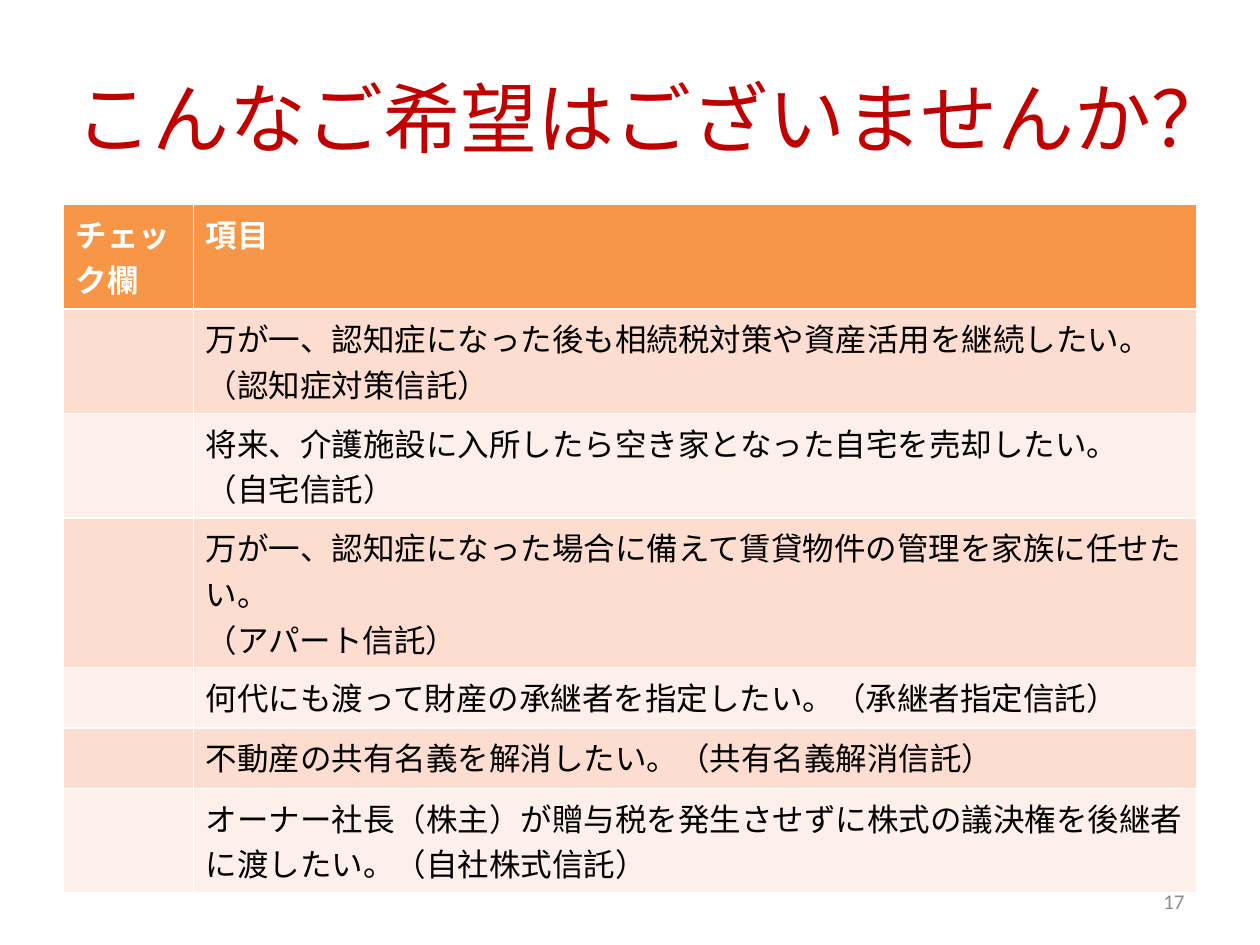
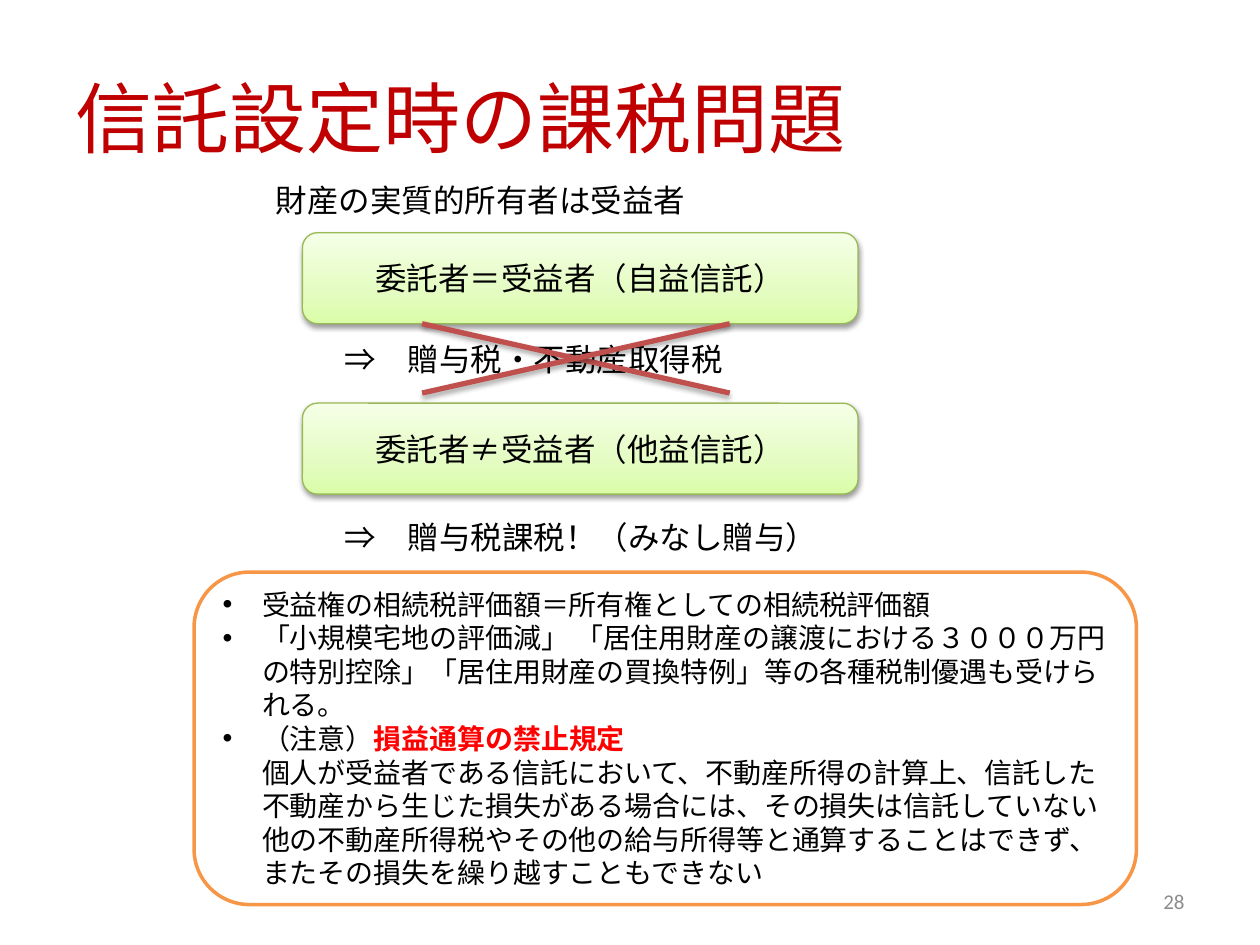
from lxml.etree import SubElement
from copy import deepcopy
from pptx import Presentation
from pptx.dml.color import RGBColor
from pptx.enum.shapes import MSO_CONNECTOR, MSO_SHAPE
from pptx.enum.text import MSO_ANCHOR, MSO_AUTO_SIZE, PP_ALIGN
from pptx.oxml.ns import qn
from pptx.util import Pt

FONT = "Calibri"
HEX = {
    "title": "C00000", "text": "000000", "white": "FFFFFF", "number": "8C8C8C",
    "orange": "F79646", "peach": "FCDDCF", "cream": "FDEFE9",
    "edge": "98B955", "cross": "C0504D", "alert": "FF0000",
}
GREENS = [(0, "DAFDA7"), (0.35, "E4FCC2"), (1, "F5FFE7")]
RGB = {name: RGBColor.from_string(value) for name, value in HEX.items()}


def put(frame, text, size=18, color="text", bold=False, align=PP_ALIGN.LEFT,
        anchor=MSO_ANCHOR.TOP, fit=MSO_AUTO_SIZE.NONE, hang=0):
    """Write a string or a list of paragraphs; *stars* mark alert text."""
    frame.word_wrap = True
    frame.auto_size = fit
    frame.vertical_anchor = anchor
    for i, para in enumerate([text] if isinstance(text, str) else text):
        p = frame.add_paragraph() if i else frame.paragraphs[0]
        p.alignment = align
        for j, piece in enumerate(para.split("*")):
            for k, line in enumerate(piece.split("\n")):
                if k:
                    p.add_line_break()
                if not line:
                    continue
                run = p.add_run()
                run.text = line
                run.font.name = FONT
                run.font.size = Pt(size)
                run.font.bold = bold or j % 2 == 1
                run.font.color.rgb = RGB["alert" if j % 2 else color]
        for gap in p._p.findall(qn("a:br")):
            gap.insert(0, deepcopy(p.runs[0]._r.rPr))
        if hang:
            props = p._p.get_or_add_pPr()
            props.set("marL", str(Pt(hang)))
            props.set("indent", str(-Pt(hang)))
            SubElement(props, qn("a:buFont"), typeface="Arial")
            SubElement(props, qn("a:buChar"), char="•")


def shade(shape, alpha, drop):
    """Cast a soft black shadow straight down."""
    effects = SubElement(shape._element.spPr, qn("a:effectLst"))
    outer = SubElement(effects, qn("a:outerShdw"), blurRad=str(Pt(3.1)),
                       dist=str(Pt(drop)), dir="5400000", rotWithShape="0")
    black = SubElement(outer, qn("a:srgbClr"), val=HEX["text"])
    SubElement(black, qn("a:alpha"), val=str(alpha * 1000))


deck = Presentation()
deck.slide_width, deck.slide_height = Pt(720), Pt(540)

# Title and page number on both slides
slides = []
for title, number in [("こんなご希望はございませんか？", "17"),
                      ("信託設定時の課税問題", "28")]:
    slide = deck.slides.add_slide(deck.slide_layouts[5])
    head = slide.shapes.title
    head.left, head.top, head.width, head.height = Pt(36), Pt(21.6), Pt(648), Pt(90)
    put(head.text_frame, title, size=44, color="title", anchor=MSO_ANCHOR.MIDDLE)
    page = slide.shapes.add_textbox(Pt(516), Pt(500.5), Pt(168), Pt(28.75))
    put(page.text_frame, number, size=12, color="number",
        align=PP_ALIGN.RIGHT, anchor=MSO_ANCHOR.MIDDLE)
    slides.append(slide)
wishes, taxes = slides

# Checklist of wishes
TALL, LOW = 59.76, 34.56
rows = [
    (TALL, "項目"),
    (TALL, "万が一、認知症になった後も相続税対策や資産活用を継続したい。\n（認知症対策信託）"),
    (TALL, "将来、介護施設に入所したら空き家となった自宅を売却したい。\n（自宅信託）"),
    (TALL, ["万が一、認知症になった場合に備えて賃貸物件の管理を家族に任せたい。",
            "（アパート信託）"]),
    (LOW, "何代にも渡って財産の承継者を指定したい。（承継者指定信託）"),
    (LOW, "不動産の共有名義を解消したい。（共有名義解消信託）"),
    (TALL, "オーナー社長（株主）が贈与税を発生させずに株式の議決権を後継者に渡したい。"
           "（自社株式信託）"),
]
table = wishes.shapes.add_table(len(rows), 2, Pt(36), Pt(116.8), Pt(648),
                                Pt(sum(high for high, _ in rows))).table
table.columns[0].width, table.columns[1].width = Pt(74.5), Pt(573.5)
for i, (high, wish) in enumerate(rows):
    table.rows[i].height = Pt(high)
    band = ("peach" if i % 2 else "cream") if i else "orange"
    for cell in table.rows[i].cells:
        cell.fill.solid()
        cell.fill.fore_color.rgb = RGB[band]
    style = {} if i else {"color": "white", "bold": True}
    put(table.cell(i, 1).text_frame, wish, **style)
put(table.cell(0, 0).text_frame, "チェック欄", color="white", bold=True)

# Two kinds of trust
for top, kind in [(133, "委託者＝受益者（自益信託）"), (230.4, "委託者≠受益者（他益信託）")]:
    box = taxes.shapes.add_shape(MSO_SHAPE.ROUNDED_RECTANGLE,
                                 Pt(172.8), Pt(top), Pt(317.5), Pt(52))
    box.fill.gradient()
    box.fill.gradient_angle = 90
    stops = box._element.spPr.find(qn("a:gradFill")).find(qn("a:gsLst"))
    stops.append(deepcopy(stops[0]))
    for stop, (place, green) in zip(box.fill.gradient_stops, GREENS):
        stop.position = place
        stop.color.rgb = RGBColor.from_string(green)
    box.line.color.rgb = RGB["edge"]
    box.line.width = Pt(0.75)
    shade(box, 38, 1.6)
    put(box.text_frame, kind, align=PP_ALIGN.CENTER, anchor=MSO_ANCHOR.MIDDLE)

# Premise and outcomes
for left, top, note in [(150.5, 100, "財産の実質的所有者は受益者"),
                        (190, 190.8, "⇒　贈与税・不動産取得税"),
                        (190, 292.5, "⇒　贈与税課税！（みなし贈与）")]:
    label = taxes.shapes.add_textbox(Pt(left), Pt(top), Pt(329), Pt(29))
    put(label.text_frame, note, fit=MSO_AUTO_SIZE.SHAPE_TO_FIT_TEXT)

# Cross over the taxes that do not apply
for start, end in [(241.2, 417), (417, 241.2)]:
    stroke = taxes.shapes.add_connector(MSO_CONNECTOR.STRAIGHT,
                                        Pt(start), Pt(185), Pt(end), Pt(224.6))
    stroke.line.color.rgb = RGB["cross"]
    stroke.line.width = Pt(3)
    shade(stroke, 35, 1.8)

# Remarks
panel = taxes.shapes.add_shape(MSO_SHAPE.ROUNDED_RECTANGLE,
                               Pt(110.9), Pt(326.9), Pt(538.5), Pt(190))
panel.shadow.inherit = False
panel.fill.solid()
panel.fill.fore_color.rgb = RGB["white"]
panel.line.color.rgb = RGB["orange"]
panel.line.width = Pt(2)
put(panel.text_frame, [
    "受益権の相続税評価額＝所有権としての相続税評価額",
    "「小規模宅地の評価減」 「居住用財産の譲渡における３０００万円の特別控除」"
    "「居住用財産の買換特例」等の各種税制優遇も受けられる。",
    "（注意）*損益通算の禁止規定*\n個人が受益者である信託において、不動産所得の計算上、"
    "信託した不動産から生じた損失がある場合には、その損失は信託していない"
    "他の不動産所得税やその他の給与所得等と通算することはできず、"
    "またその損失を繰り越すこともできない",
], size=16, anchor=MSO_ANCHOR.MIDDLE, hang=22.5)

deck.save("out.pptx")
